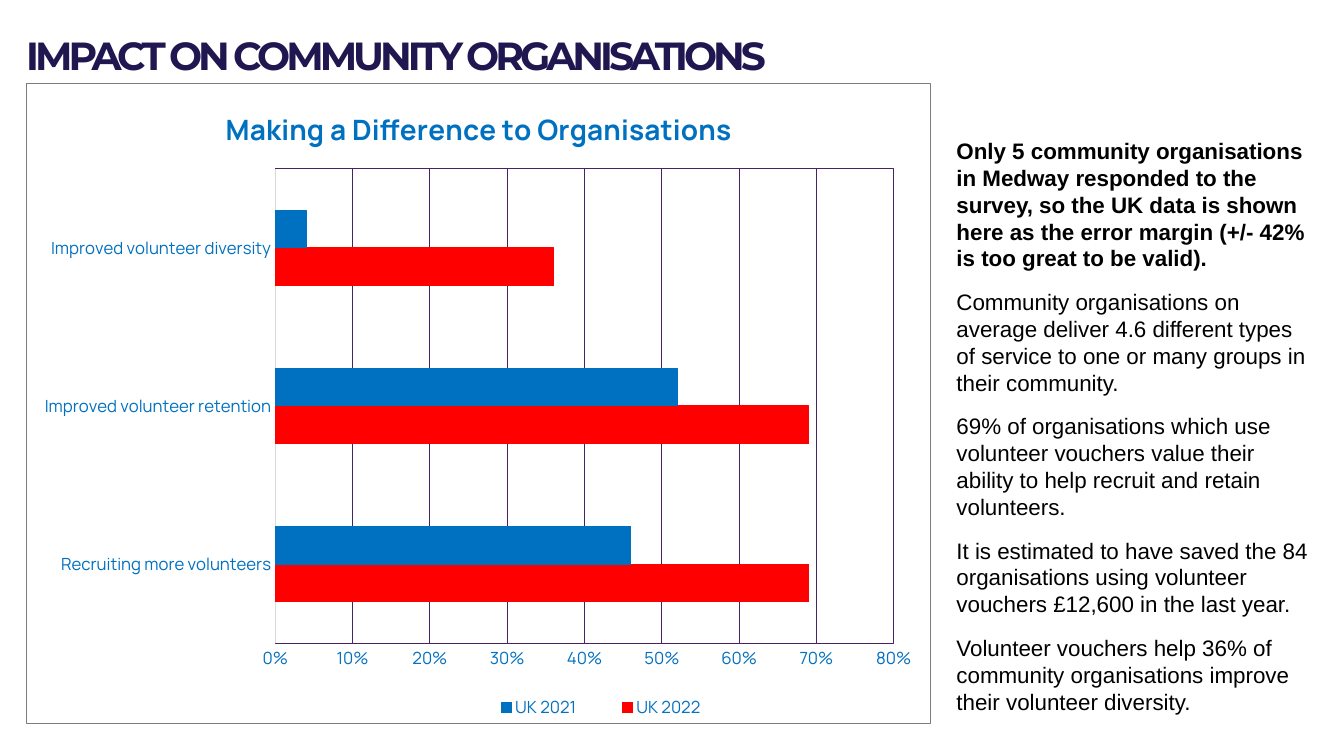
import lxml.etree
import pptx
import pptx.chart.data
import pptx.dml.color
import pptx.enum.chart
import pptx.enum.text
import pptx.oxml
import pptx.oxml.ns
import pptx.util

Pt = pptx.util.Pt
qn = pptx.oxml.ns.qn
THEME = {
    "navy": "201751", "blue": "0070C0", "red": "FF0000", "black": "000000",
    "grid": "472364", "axis": "D9D9D9", "edge": "7C7C7C",
    "head": 28, "title": 20, "body": 16, "label": 12, "rule": 0.75,
}
LABEL = {"name": "Manrope", "size": Pt(THEME["label"]), "bold": False}
NOTES = [
    "Only 5 community organisations in Medway responded to the survey, so the UK data is shown here as the error margin (+/- 42% is too great to be valid).",
    "Community organisations on average deliver 4.6 different types of service to one or many groups in their community.",
    "69% of organisations which use volunteer vouchers value their ability to help recruit and retain volunteers.",
    "It is estimated to have saved the 84 organisations using volunteer vouchers £12,600 in the last year.",
    "Volunteer vouchers help 36% of community organisations improve their volunteer diversity.",
]
GROUPS = ["Recruiting more volunteers", "Improved volunteer retention", "Improved volunteer diversity"]
SERIES = [("UK 2022", [0.69, 0.69, 0.36], "red"), ("UK 2021", [0.46, 0.52, 0.04], "blue")]


def apply(item, values):
    for key, value in values.items():
        setattr(item, key, value)


def tint(name):
    return pptx.dml.color.RGBColor.from_string(THEME[name])


def style(font, values, color):
    apply(font, values)
    font.color.rgb = tint(color)


def rule(line, color):
    line.color.rgb = tint(color)
    line.width = Pt(THEME["rule"])


def place(shape, box):
    apply(shape, dict(zip(("left", "top", "width", "height"), map(Pt, box))))


def frame(node, color):
    ns = pptx.oxml.ns.nsdecls("c", "a")
    return pptx.oxml.parse_xml(
        f'<c:spPr {ns}><a:noFill/><a:ln w="{Pt(THEME["rule"])}"><a:solidFill>'
        f'<a:srgbClr val="{THEME[color]}"/></a:solidFill></a:ln></c:spPr>')


def layout(node, inner=False, **spots):
    for old in node.findall(qn("c:layout")):
        node.remove(old)
    outer = lxml.etree.Element(qn("c:layout"))
    manual = lxml.etree.SubElement(outer, qn("c:manualLayout"))
    parts = [("layoutTarget", "inner")] if inner else []
    parts += [("xMode", "edge"), ("yMode", "edge")] + list(spots.items())
    for tag, value in parts:
        lxml.etree.SubElement(manual, qn("c:" + tag)).set("val", str(value))
    return outer


def heading(shape, box):
    place(shape, box)
    text = shape.text_frame
    apply(text, {"margin_left": 0, "margin_top": 0, "margin_right": 0, "margin_bottom": 0,
                 "vertical_anchor": pptx.enum.text.MSO_ANCHOR.TOP, "word_wrap": True,
                 "auto_size": pptx.enum.text.MSO_AUTO_SIZE.NONE})
    para = text.paragraphs[0]
    apply(para, {"alignment": pptx.enum.text.PP_ALIGN.LEFT, "line_spacing": Pt(32.3)})
    run = para.add_run()
    run.text = "IMPACT ON COMMUNITY ORGANISATIONS"
    style(run.font, {"name": "Montserrat", "size": Pt(THEME["head"]), "bold": True}, "navy")
    run.font._element.set("spc", "-280")


def notes(shape, box):
    place(shape, box)
    text = shape.text_frame
    apply(text, {"word_wrap": True, "auto_size": pptx.enum.text.MSO_AUTO_SIZE.NONE,
                 "vertical_anchor": pptx.enum.text.MSO_ANCHOR.TOP})
    for index, words in enumerate(NOTES):
        para = text.add_paragraph() if index else text.paragraphs[0]
        props = para._p.get_or_add_pPr()
        props.set("marL", "0")
        props.set("indent", "0")
        lxml.etree.SubElement(props, qn("a:buNone"))
        apply(para, {"space_before": Pt(0), "space_after": Pt(12)})
        run = para.add_run()
        run.text = words
        style(run.font, {"name": "Arial", "size": Pt(THEME["body"]), "bold": index == 0}, "black")


def bars(slide, box):
    data = pptx.chart.data.CategoryChartData(number_format="0%")
    data.categories = GROUPS
    for name, values, color in SERIES:
        data.add_series(name, values)
    kind = pptx.enum.chart.XL_CHART_TYPE.BAR_CLUSTERED
    chart = slide.shapes.add_chart(kind, *map(Pt, box), data).chart
    style(chart.font, LABEL, "blue")

    chart.has_title = True
    run = chart.chart_title.text_frame.paragraphs[0].add_run()
    run.text = "Making a Difference to Organisations"
    style(run.font, {"name": "Manrope", "size": Pt(THEME["title"]), "bold": True}, "blue")

    plot = chart.plots[0]
    apply(plot, {"gap_width": 219, "overlap": 0, "vary_by_categories": False})
    for series, (name, values, color) in zip(plot.series, SERIES):
        series.format.fill.solid()
        series.format.fill.fore_color.rgb = tint(color)
        rule(series.format.line, color)

    none = pptx.enum.chart.XL_TICK_MARK.NONE
    for axis in (chart.category_axis, chart.value_axis):
        apply(axis, {"major_tick_mark": none, "minor_tick_mark": none})
        style(axis.tick_labels.font, LABEL, "blue")
    rule(chart.category_axis.format.line, "axis")
    scale = chart.value_axis
    apply(scale, {"minimum_scale": 0, "maximum_scale": 0.8, "major_unit": 0.1,
                  "has_major_gridlines": True})
    apply(scale.tick_labels, {"number_format": "0%", "number_format_is_linked": False})
    scale.format.line.fill.background()
    rule(scale.major_gridlines.format.line, "grid")

    chart.has_legend = True
    legend = chart.legend
    apply(legend, {"position": pptx.enum.chart.XL_LEGEND_POSITION.BOTTOM, "include_in_layout": False})
    style(legend.font, LABEL, "blue")
    key = legend._element
    key.find(qn("c:legendPos")).addnext(layout(key, x=0.48, y=0.95, w=0.31, h=0.05))

    root = chart._chartSpace
    area = root.chart.plotArea
    area.insert(0, layout(area, True, x=0.275, y=0.134, w=0.684, h=0.741))
    area.append(frame(area, "grid"))
    root.chart.addnext(frame(root, "edge"))


def main():
    deck = pptx.Presentation()
    apply(deck, {"slide_width": Pt(960), "slide_height": Pt(540)})
    slide = deck.slides.add_slide(deck.slide_layouts[1])
    heading(slide.shapes.title, (18.7, 23.8, 681, 71.3))
    bars(slide, (18.7, 59, 646.6, 458))
    notes(slide.placeholders[1], (676, 94.3, 265.7, 443.5))
    deck.save("out.pptx")


if __name__ == "__main__":
    main()
